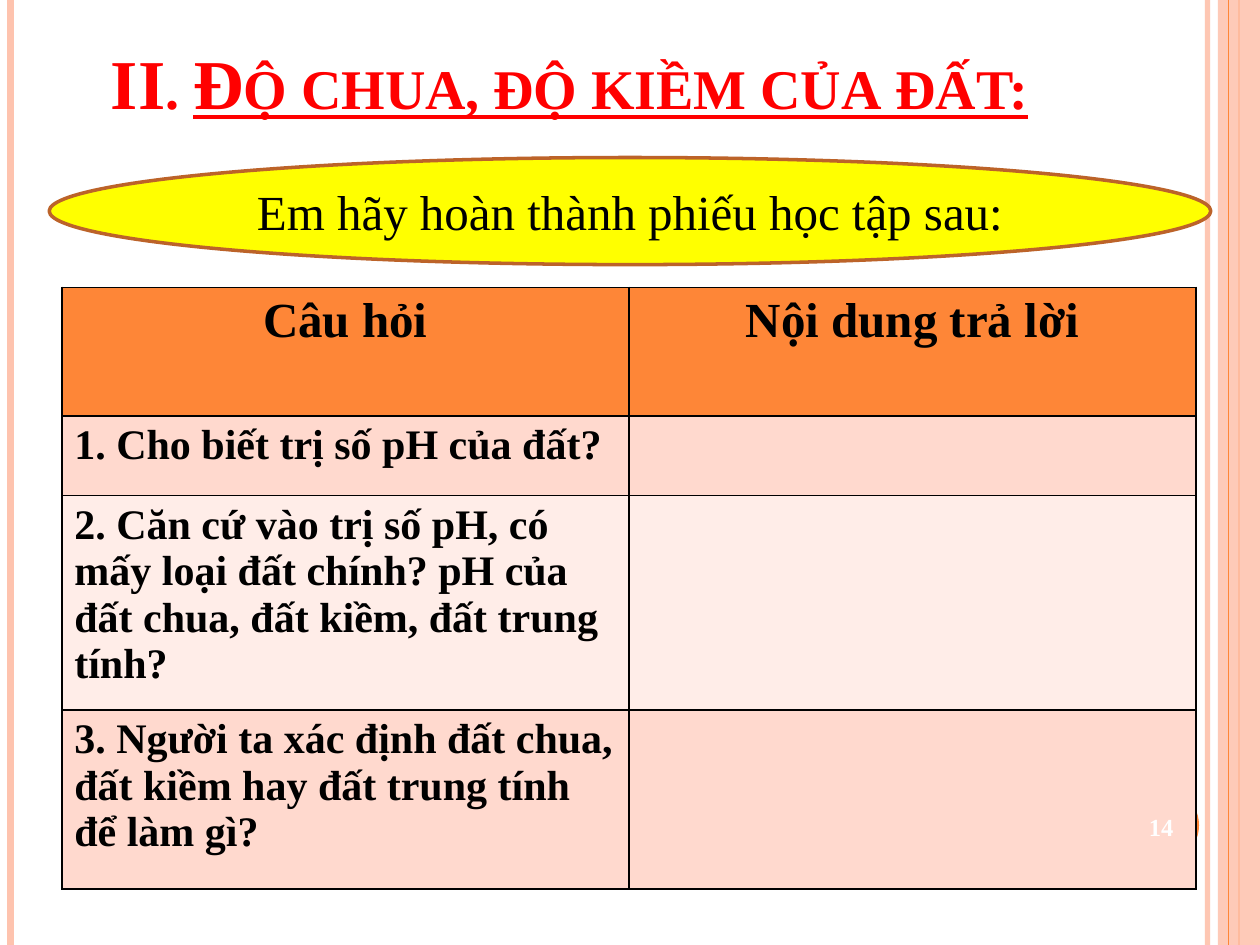
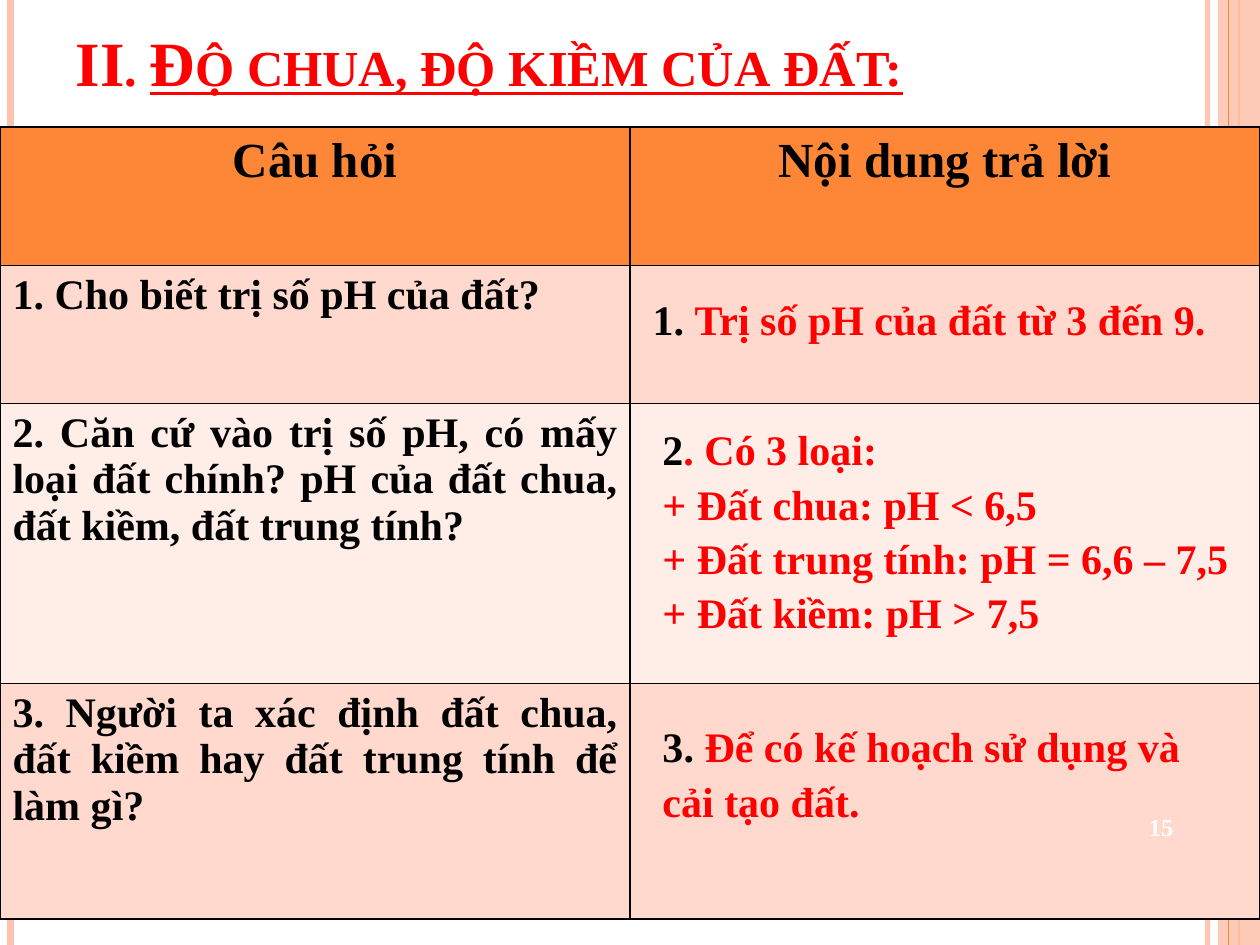
from lxml.etree import SubElement
from pptx import Presentation
from pptx.dml.color import RGBColor
from pptx.enum.shapes import MSO_CONNECTOR, MSO_SHAPE
from pptx.enum.text import MSO_ANCHOR, MSO_AUTO_SIZE, PP_ALIGN
from pptx.oxml.ns import qn
from pptx.util import Pt

HUES = {
    "peach": "FEC3AE", "orange": "FE8637", "brown": "BC6329",
    "yellow": "FFFF00", "red": "FF0000", "black": "000000",
    "white": "FFFFFF", "odd": "FFD9CE", "even": "FFEDE8",
}
FONT = "Times New Roman"
WIDE, HIGH = 720, 540

HEADS = ["Câu hỏi", "Nội dung trả lời"]
ASKS = [
    "1. Cho biết trị số pH của đất?",
    "2. Căn cứ vào trị số pH, có mấy loại đất chính? pH của đất chua, "
    "đất kiềm, đất trung tính?",
    "3. Người ta xác định đất chua, đất kiềm hay đất trung tính để làm gì?",
]
REPLIES = [
    ((365.8, 162, 343.4, 36), [("1. ", "Trị số pH của đất từ 3 đến 9.")]),
    ((371.5, 236.2, 348.5, 123.8), [
        ("2", ". Có 3 loại:"),
        ("", "+ Đất chua: pH < 6,5"),
        ("", "+ Đất trung tính: pH = 6,6 – 7,5"),
        ("", "+ Đất kiềm: pH > 7,5"),
    ]),
    ((371.5, 406.1, 326.2, 65.5), [("3. ", "Để có kế hoạch sử dụng và cải tạo đất.")]),
]


def tone(name):
    return RGBColor.from_string(HUES[name])


def place(box):
    return [Pt(v) for v in box]


def style(run, size, hue="black", bold=True):
    font = run.font
    font.name, font.size, font.bold = FONT, Pt(size), bold
    font.color.rgb = tone(hue)


def write(para, text, size, hue="black", bold=True):
    run = para.add_run()
    run.text = text
    style(run, size, hue, bold)
    return run


def fade(item, percent):
    for color in item._element.spPr.iter(qn("a:srgbClr")):
        SubElement(color, qn("a:alpha"), val=str(percent * 1000))


def add_rule(slide, x, hue, width):
    rule = slide.shapes.add_connector(
        MSO_CONNECTOR.STRAIGHT, Pt(x), 0, Pt(x), Pt(HIGH))
    rule.line.color.rgb = tone(hue)
    rule.line.width = Pt(width)
    SubElement(rule._element.spPr, qn("a:effectLst"))
    return rule


def add_form(slide, kind, box, hue, edge=None):
    form = slide.shapes.add_shape(kind, *place(box))
    form.shadow.inherit = False
    form.fill.solid()
    form.fill.fore_color.rgb = tone(hue)
    if edge:
        form.line.color.rgb = tone(edge)
        form.line.width = Pt(2)
    else:
        form.line.fill.background()
    return form


def add_frame(slide):
    fade(add_rule(slide, 690, "peach", 3), 93)
    add_rule(slide, 6, "peach", 4.5)
    add_rule(slide, 708, "orange", 1.5)
    fade(add_form(slide, MSO_SHAPE.RECTANGLE, (696, 0, 24, HIGH), "peach"), 87)
    add_rule(slide, 702, "orange", 0.75)
    add_form(slide, MSO_SHAPE.OVAL, (642, 450, 43.2, 43.2), "orange")


def add_title(slide, box, size):
    title = slide.shapes.title
    title.left, title.top, title.width, title.height = place(box)
    frame = title.text_frame
    frame.auto_size = MSO_AUTO_SIZE.NONE
    frame.vertical_anchor = MSO_ANCHOR.BOTTOM
    para = frame.paragraphs[0]
    para.alignment = PP_ALIGN.LEFT
    write(para, "II. ", size, "red")
    write(para, "Độ chua, độ kiềm của đất:", size, "red").font.underline = True
    for run in para.runs:
        run._r.get_or_add_rPr().set("cap", "small")


def add_edges(cell):
    props = cell._tc.get_or_add_tcPr()
    for side in "LRTB":
        line = SubElement(props, qn(f"a:ln{side}"), w=str(Pt(1)))
        fill = SubElement(line, qn("a:solidFill"))
        SubElement(fill, qn("a:srgbClr"), val=HUES["black"])


def add_grid(slide, box, heights, align):
    rows = [HEADS] + [[ask, ""] for ask in ASKS]
    grid = slide.shapes.add_table(len(rows), 2, *place(box)).table
    for i, (texts, height) in enumerate(zip(rows, heights)):
        grid.rows[i].height = Pt(height)
        hue = "orange" if i == 0 else "odd" if i % 2 else "even"
        for cell, text in zip(grid.rows[i].cells, texts):
            add_edges(cell)
            cell.fill.solid()
            cell.fill.fore_color.rgb = tone(hue)
            if text:
                para = cell.text_frame.paragraphs[0]
                para.alignment = align if i else PP_ALIGN.CENTER
                write(para, text, 24 if i else 28)


def add_banner(slide, box, text):
    oval = add_form(slide, MSO_SHAPE.OVAL, box, "yellow", "brown")
    frame = oval.text_frame
    frame.vertical_anchor = MSO_ANCHOR.MIDDLE
    para = frame.paragraphs[0]
    para.alignment = PP_ALIGN.CENTER
    write(para, text, 28, bold=False)


def add_reply(slide, box, lines):
    frame = slide.shapes.add_textbox(*place(box)).text_frame
    frame.word_wrap = True
    for i, (mark, text) in enumerate(lines):
        para = frame.add_paragraph() if i else frame.paragraphs[0]
        para.line_spacing = 1.08
        if mark:
            write(para, mark, 24)
        write(para, text, 24, "red")


def add_number(slide, number):
    frame = slide.shapes.add_textbox(*place((642, 457, 43.2, 31))).text_frame
    frame.margin_left = frame.margin_right = 0
    frame.vertical_anchor = MSO_ANCHOR.MIDDLE
    frame.word_wrap = True
    para = frame.paragraphs[0]
    para.alignment = PP_ALIGN.CENTER
    write(para, str(number), 14, "white")


def start_slide(deck, box, size):
    slide = deck.slides.add_slide(deck.slide_layouts[5])
    add_frame(slide)
    add_title(slide, box, size)
    return slide


def ask_slide(deck):
    slide = start_slide(deck, (56.2, 0, 588.2, 74.2), 40)
    add_grid(slide, (35.3, 164.2, 648, 344), (73.5, 45.5, 122.5, 102.5),
             PP_ALIGN.LEFT)
    add_banner(slide, (28.1, 90, 663.8, 61.2),
               "Em hãy hoàn thành phiếu học tập sau:")
    add_number(slide, 14)


def reply_slide(deck):
    slide = start_slide(deck, (36, 21.6, 588.2, 38.9), 36)
    add_grid(slide, (0, 72.7, WIDE, 452.4), (79, 79, 160, 134.4),
             PP_ALIGN.JUSTIFY)
    for box, lines in REPLIES:
        add_reply(slide, box, lines)
    add_number(slide, 15)


def main():
    deck = Presentation()
    deck.slide_width, deck.slide_height = Pt(WIDE), Pt(HIGH)
    ask_slide(deck)
    reply_slide(deck)
    deck.save("out.pptx")


if __name__ == "__main__":
    main()
